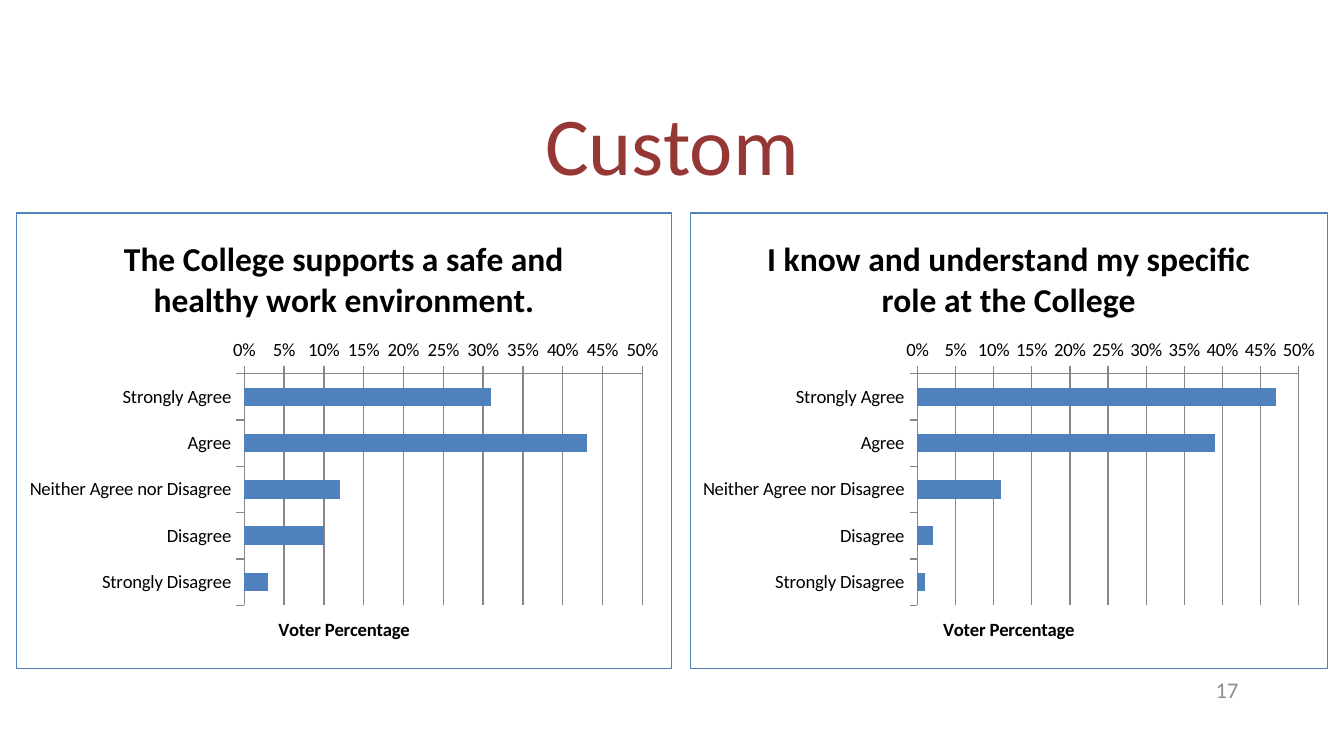
"""Build a slide that compares two survey questions as bar charts."""
from dataclasses import dataclass

from lxml import etree
from pptx import Presentation
from pptx import util as u
from pptx.chart import data as chart_data
from pptx.dml import color
from pptx.enum import chart as charts
from pptx.enum import text
from pptx.oxml import ns


@dataclass(frozen=True)
class Theme:
    """Colours, font and type sizes of the slide."""
    font: str = "Calibri"
    heading: str = "953735"
    ink: str = "000000"
    muted: str = "8C8C8C"
    accent: str = "4F81BD"
    grid: str = "878787"
    heading_size: int = 44
    chart_title_size: int = 18
    page_number_size: int = 12
    label_size: int = 10


THEME = Theme()
ANSWERS = ["Strongly Agree", "Agree", "Neither Agree nor Disagree", "Disagree", "Strongly Disagree"]
CHART_TOP, CHART_HEIGHT = 113.8, 244.8
QUESTIONS = [
    ("I know and understand my specific role at the College", 369.4, 342, [0.47, 0.39, 0.11, 0.02, 0.01]),
    ("The College supports a safe and healthy work environment.", 8.6, 351.4, [0.31, 0.43, 0.12, 0.1, 0.03]),
]


def rgb(value):
    """Return a colour from its hexadecimal form."""
    return color.RGBColor.from_string(value)


def style_font(font, size, ink, bold=False):
    """Give a font the theme face with a size, colour and weight."""
    font.name, font.size, font.bold = THEME.font, u.Pt(size), bold
    font.color.rgb = rgb(ink)


def write(frame, words, *, size, ink, bold=False, align=None, spacing=None):
    """Write one formatted paragraph into a text frame."""
    para = frame.paragraphs[0]
    span = para.add_run()
    span.text = words
    style_font(span.font, size, ink, bold)
    if align is not None:
        para.alignment = align
    if spacing is not None:
        para.line_spacing = spacing


def place(box, left, top, width, height):
    """Move and size a box in points."""
    box.left, box.top, box.width, box.height = map(u.Pt, (left, top, width, height))


def add_heading(page, words):
    """Fill the title placeholder."""
    box = page.shapes.title
    place(box, 49.5, 40.4, 621, 78.3)
    box.text_frame.vertical_anchor = text.MSO_ANCHOR.MIDDLE
    write(box.text_frame, words, size=THEME.heading_size, ink=THEME.heading,
          align=text.PP_ALIGN.CENTER, spacing=0.9)


def add_page_number(page, words):
    """Add the page number at the lower right."""
    box = page.shapes.add_textbox(u.Pt(508.5), u.Pt(358.5), u.Pt(162), u.Pt(21.6))
    box.text_frame.word_wrap = True
    box.text_frame.vertical_anchor = text.MSO_ANCHOR.MIDDLE
    write(box.text_frame, words, size=THEME.page_number_size, ink=THEME.muted,
          align=text.PP_ALIGN.RIGHT)


def add_border(chart, ink, width):
    """Draw a line round the chart area."""
    area = etree.Element(ns.qn("c:spPr"))
    etree.SubElement(area, ns.qn("a:noFill"))
    line = etree.SubElement(area, ns.qn("a:ln"), w=str(u.Pt(width)))
    fill = etree.SubElement(line, ns.qn("a:solidFill"))
    etree.SubElement(fill, ns.qn("a:srgbClr"), val=ink)
    chart.element.find(ns.qn("c:chart")).addnext(area)


def style_axis(axis):
    """Give an axis its line, outside ticks and label font."""
    axis.format.line.color.rgb = rgb(THEME.grid)
    axis.major_tick_mark = charts.XL_TICK_MARK.OUTSIDE
    axis.minor_tick_mark = charts.XL_TICK_MARK.NONE
    style_font(axis.tick_labels.font, THEME.label_size, THEME.ink)


def style_value_axis(axis):
    """Set the percentage scale, gridlines and title."""
    axis.minimum_scale, axis.maximum_scale, axis.major_unit = 0, 0.5, 0.05
    axis.tick_labels.number_format = "0%"
    axis.tick_labels.number_format_is_linked = False
    axis.has_major_gridlines = True
    axis.major_gridlines.format.line.color.rgb = rgb(THEME.grid)
    write(axis.axis_title.text_frame, "Voter Percentage", size=THEME.label_size,
          ink=THEME.ink, bold=True)


def add_question(page, question, left, width, shares):
    """Add one bar chart of the answers to a question."""
    data = chart_data.CategoryChartData(number_format="0%")
    data.categories = ANSWERS
    data.add_series("Series 1", shares)
    frame = page.shapes.add_chart(charts.XL_CHART_TYPE.BAR_CLUSTERED, u.Pt(left), u.Pt(CHART_TOP),
                                  u.Pt(width), u.Pt(CHART_HEIGHT), data)
    chart = frame.chart
    style_font(chart.font, THEME.label_size, THEME.ink)
    chart.has_legend = False
    write(chart.chart_title.text_frame, question, size=THEME.chart_title_size,
          ink=THEME.ink, bold=True)
    chart.chart_title.include_in_layout = False
    for axis in (chart.category_axis, chart.value_axis):
        style_axis(axis)
    chart.category_axis.reverse_order = True
    style_value_axis(chart.value_axis)
    plot = chart.plots[0]
    plot.gap_width = 150
    plot.vary_by_categories = False
    bars = plot.series[0].format.fill
    bars.solid()
    bars.fore_color.rgb = rgb(THEME.accent)
    add_border(chart, THEME.accent, 0.75)


def main():
    """Build and save the deck."""
    deck = Presentation()
    deck.slide_width, deck.slide_height = u.Pt(720), u.Pt(405)
    page = deck.slides.add_slide(deck.slide_layouts[5])
    add_heading(page, "Custom")
    for question in QUESTIONS:
        add_question(page, *question)
    add_page_number(page, "17")
    deck.save("out.pptx")


if __name__ == "__main__":
    main()
